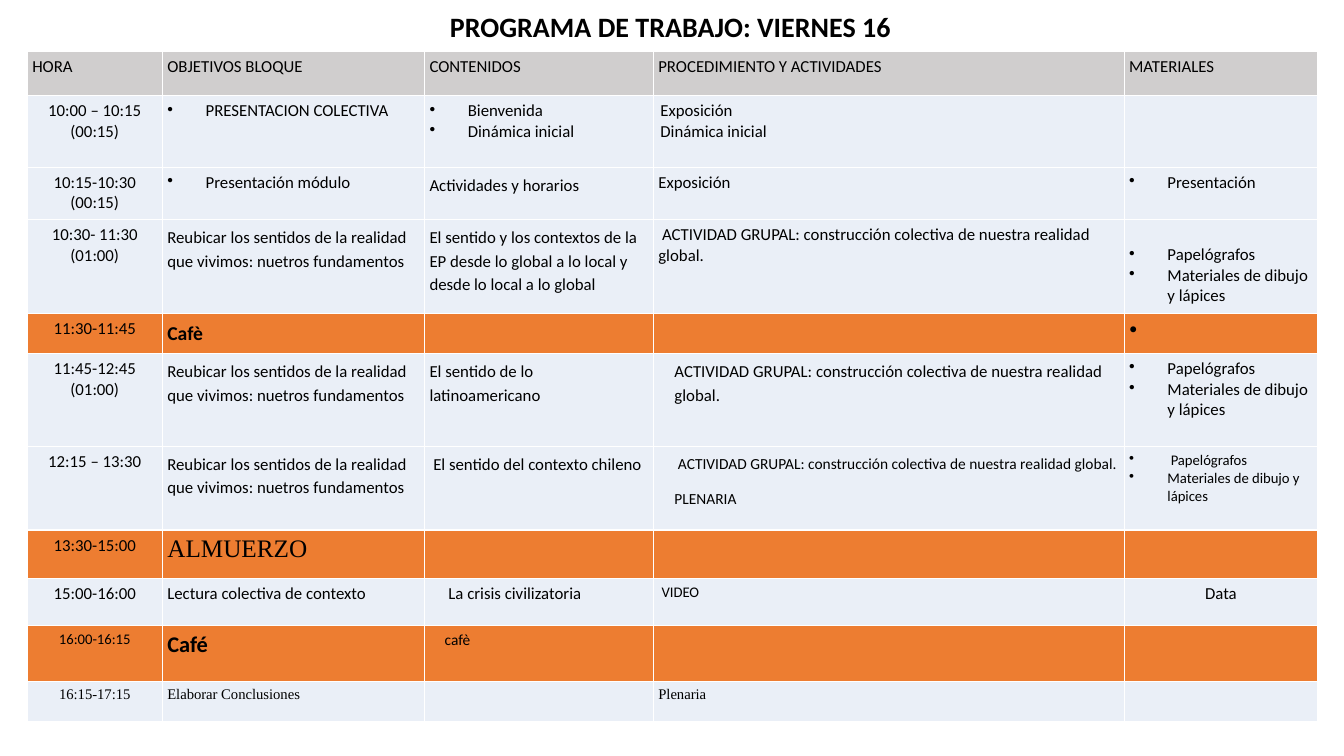
import pptx
import pptx.dml.color
import pptx.enum.text
import pptx.oxml
import pptx.util
from lxml import etree

WIDE, HIGH = 13.33, 7.5
COLS = [1.34, 2.6, 2.27, 4.67, 1.92]
ROWS = [0.44, 0.71, 0.52, 0.93, 0.4, 0.92, 0.83, 0.48, 0.47, 0.55, 0.4]
GREY, PALE, ORANGE = "D0CECE", "EAEFF7", "ED7D31"
SERIF = "Times New Roman"
PAD = 0.05
ALIGN = pptx.enum.text.PP_ALIGN
inch, point = pptx.util.Inches, pptx.util.Pt


# Cell texts: a string, or a string with its style
def hour(text, **style):
    return text, dict(style, align=ALIGN.CENTER)


def list_of(text, **style):
    return text, dict(style, bullet=True)


def loose(text, **style):
    return text, dict(style, space=1.15)


GOAL = loose("Reubicar los sentidos de la realidad que vivimos: nuetros fundamentos")
TASK = "ACTIVIDAD GRUPAL: construcción colectiva de nuestra realidad global."
TOOLS = "Papelógrafos\nMateriales de dibujo y lápices"

PLAN = [
    (GREY, ["HORA", "OBJETIVOS BLOQUE", "CONTENIDOS",
            "PROCEDIMIENTO Y ACTIVIDADES", "MATERIALES"]),
    (PALE, [hour("10:00 – 10:15\n(00:15)"), list_of("PRESENTACION COLECTIVA"),
            list_of("Bienvenida\nDinámica inicial"),
            ("Exposición\nDinámica inicial", {"left": 0.02}), ""]),
    (PALE, [hour("10:15-10:30\n(00:15)"), list_of("Presentación módulo"),
            loose("Actividades y horarios"), "Exposición", list_of("Presentación")]),
    (PALE, [hour("10:30- 11:30\n(01:00)"), GOAL,
            loose("El sentido y los contextos de la EP desde lo global a lo local "
                  "y desde lo local a lo global"),
            " " + TASK, list_of(TOOLS, top=0.25)]),
    (ORANGE, [hour("11:30-11:45"), loose("Cafè", size=14, bold=True), "", "", "•"]),
    (PALE, [hour("11:45-12:45\n(01:00)"), GOAL,
            loose("El sentido de lo latinoamericano"),
            loose(TASK, left=0.16), list_of(TOOLS)]),
    (PALE, [hour("12:15 – 13:30"), GOAL, loose(" El sentido del contexto chileno"),
            loose(" " + TASK + "\nPLENARIA", size=11, left=0.16),
            list_of(" " + TOOLS, size=10.5)]),
    (ORANGE, [hour("13:30-15:00"), ("ALMUERZO", {"size": 18, "face": SERIF}),
              "", "", ""]),
    (PALE, [hour("15:00-16:00"), "Lectura colectiva de contexto",
            (" La crisis civilizatoria", {"left": 0.15}),
            (" VIDEO", {"size": 10.5}), hour("Data")]),
    (ORANGE, [hour("16:00-16:15", size=10.5), ("Café", {"size": 16, "bold": True}),
              ("cafè", {"size": 11, "left": 0.15}), "", ""]),
    (PALE, [hour("16:15-17:15", size=10.5, face=SERIF),
            ("Elaborar Conclusiones", {"size": 10.5, "face": SERIF}), "",
            ("Plenaria", {"size": 10.5, "face": SERIF}), ""]),
]


def color(code):
    return pptx.dml.color.RGBColor.from_string(code)


def indent(para, left, bullet):
    props = para._p.get_or_add_pPr()
    if bullet:
        left = 0.38
        props.set("indent", str(-inch(left)))
        mark = etree.SubElement(props, pptx.oxml.ns.qn("a:buChar"))
        mark.set("char", "•")
    props.set("marL", str(inch(left)))


def write(frame, text, size=12, face="Calibri", bold=False, align=ALIGN.LEFT,
          space=None, left=0, bullet=False):
    frame.word_wrap = True
    for at, line in enumerate(text.split("\n")):
        para = frame.add_paragraph() if at else frame.paragraphs[0]
        para.text = line
        para.alignment = align
        if space:
            para.line_spacing = space
            para.space_after = point(10)
        indent(para, left, bullet)
        font = para.font
        font.size, font.name, font.bold = point(size), face, bold
        font.color.rgb = color("000000")


def border(cell, code):
    props = cell._tc.get_or_add_tcPr()
    for side in ("lnL", "lnR", "lnT", "lnB"):
        line = etree.SubElement(props, pptx.oxml.ns.qn("a:" + side))
        line.set("w", str(point(1)))
        fill = etree.SubElement(line, pptx.oxml.ns.qn("a:solidFill"))
        etree.SubElement(fill, pptx.oxml.ns.qn("a:srgbClr")).set("val", code)


def fill_cell(cell, item, shade):
    text, style = item if isinstance(item, tuple) else (item, {})
    style = dict(style)
    cell.margin_left = cell.margin_right = cell.margin_bottom = inch(PAD)
    cell.margin_top = inch(style.pop("top", PAD))
    border(cell, "FFFFFF")
    cell.fill.solid()
    cell.fill.fore_color.rgb = color(shade)
    write(cell.text_frame, text, **style)


def add_title(slide, text):
    box = slide.shapes.add_textbox(inch(0.38), inch(0.03), inch(12.54), inch(0.46))
    box.text_frame.vertical_anchor = pptx.enum.text.MSO_ANCHOR.MIDDLE
    write(box.text_frame, text, size=20, bold=True, align=ALIGN.CENTER)


def add_plan(slide):
    frame = slide.shapes.add_table(len(ROWS), len(COLS), inch(0.27), inch(0.51),
                                   inch(sum(COLS)), inch(sum(ROWS)))
    table = frame.table
    for col, wide in zip(table.columns, COLS):
        col.width = inch(wide)
    for row, high, (shade, items) in zip(table.rows, ROWS, PLAN):
        row.height = inch(high)
        for cell, item in zip(row.cells, items):
            fill_cell(cell, item, shade)


def main():
    deck = pptx.Presentation()
    deck.slide_width, deck.slide_height = inch(WIDE), inch(HIGH)
    slide = deck.slides.add_slide(deck.slide_layouts[6])
    add_title(slide, "PROGRAMA DE TRABAJO: VIERNES 16")
    add_plan(slide)
    deck.save("out.pptx")


if __name__ == "__main__":
    main()
